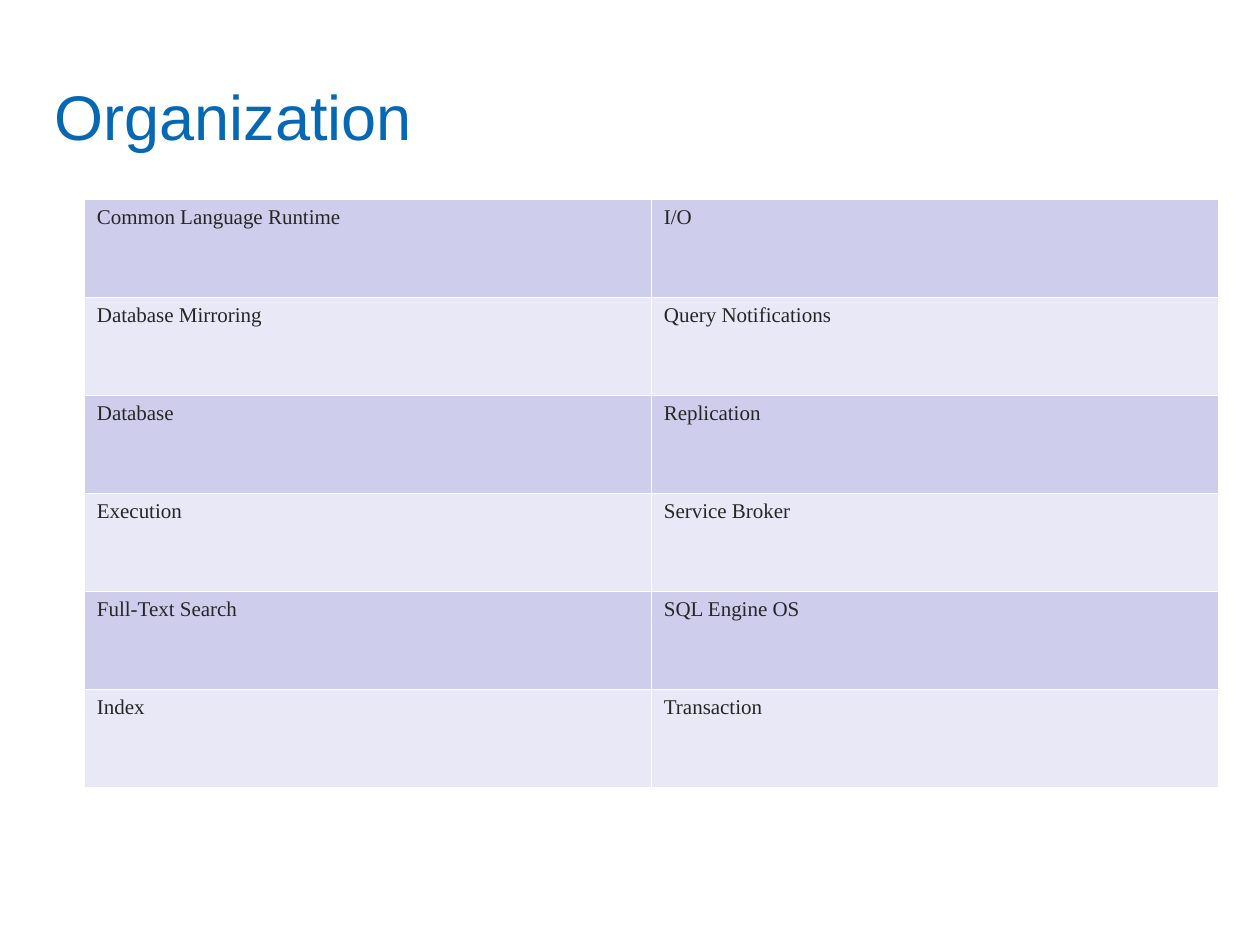
from dataclasses import dataclass

from lxml.etree import SubElement
from pptx import Presentation
from pptx.dml.color import RGBColor as RGB
from pptx.enum.text import MSO_ANCHOR as Anchor, PP_ALIGN as Align
from pptx.oxml.ns import qn
from pptx.util import Cm, Pt


@dataclass(frozen=True)
class Theme:
    title: str = "0668B3"
    ink: str = "262626"
    bands: tuple = ("CECEEC", "E8E8F6")
    rule: str = "FFFFFF"
    rule_size: float = 1
    head_font: str = "Arial"
    head_size: float = 36
    cell_font: str = "Times New Roman"
    cell_size: float = 12


THEME = Theme()

TOPICS = [
    ("Common Language Runtime", "I/O"),
    ("Database Mirroring", "Query Notifications"),
    ("Database", "Replication"),
    ("Execution", "Service Broker"),
    ("Full-Text Search", "SQL Engine OS"),
    ("Index", "Transaction"),
]


def write(frame, text, *, font, size, color, anchor=Anchor.TOP):
    frame.word_wrap = True
    frame.vertical_anchor = anchor
    para = frame.paragraphs[0]
    para.alignment = Align.LEFT
    run = para.add_run()
    run.text = text
    run.font.name = font
    run.font.size = Pt(size)
    run.font.bold = False
    run.font.color.rgb = RGB.from_string(color)


def rule(cell):
    """Draw a thin line on all four sides of the cell, before its fill is set."""
    props = cell._tc.get_or_add_tcPr()
    for side in ("lnL", "lnR", "lnT", "lnB"):
        line = SubElement(props, qn(f"a:{side}"), w=str(Pt(THEME.rule_size)))
        fill = SubElement(line, qn("a:solidFill"))
        SubElement(fill, qn("a:srgbClr"), val=THEME.rule)


def add_title(slide, text, left, top, width, height):
    title = slide.shapes.title
    title.left, title.top, title.width, title.height = left, top, width, height
    write(title.text_frame, text, font=THEME.head_font, size=THEME.head_size,
          color=THEME.title, anchor=Anchor.MIDDLE)


def add_grid(slide, rows, left, top, width, height):
    grid = slide.shapes.add_table(
        len(rows), len(rows[0]), left, top, width, height).table
    grid.first_row = grid.horz_banding = False
    for r, row in enumerate(rows):
        for c, text in enumerate(row):
            cell = grid.cell(r, c)
            rule(cell)
            cell.fill.solid()
            cell.fill.fore_color.rgb = RGB.from_string(THEME.bands[r % 2])
            write(cell.text_frame, text, font=THEME.cell_font,
                  size=THEME.cell_size, color=THEME.ink)


def main():
    deck = Presentation()
    deck.slide_width, deck.slide_height = Cm(25.4), Cm(19.05)
    slide = deck.slides.add_slide(deck.slide_layouts.get_by_name("Title Only"))
    add_title(slide, "Organization", Cm(0.85), Cm(1.06), Cm(24.77), Cm(2.54))
    add_grid(slide, TOPICS, Cm(1.7), Cm(4.02), Cm(22.86), Cm(11.86))
    deck.save("out.pptx")


if __name__ == "__main__":
    main()
